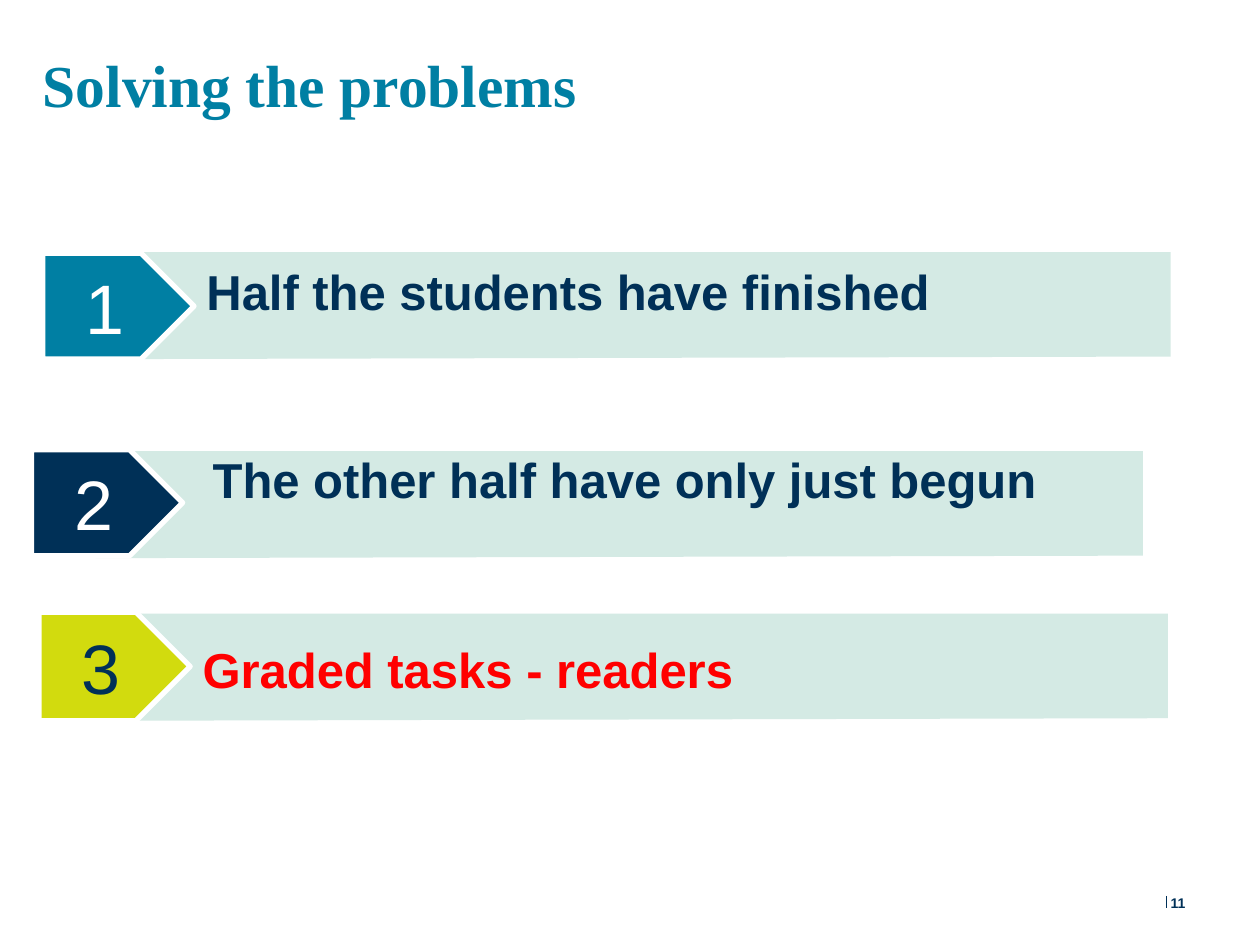
from dataclasses import dataclass

from lxml import etree
from pptx import Presentation
from pptx.dml.color import RGBColor
from pptx.enum.shapes import MSO_CONNECTOR, MSO_SHAPE
from pptx.enum.text import MSO_ANCHOR, PP_ALIGN
from pptx.oxml.ns import qn
from pptx.util import Inches, Pt

PENTAGON = MSO_SHAPE.PENTAGON
STRAIGHT = MSO_CONNECTOR.STRAIGHT
TOP, MIDDLE = MSO_ANCHOR.TOP, MSO_ANCHOR.MIDDLE
LEFT, CENTER = PP_ALIGN.LEFT, PP_ALIGN.CENTER


@dataclass(frozen=True)
class Theme:
    """Colours, fonts and type sizes of the slide."""
    teal: str = "007FA3"
    navy: str = "003057"
    lime: str = "D2DB0E"
    mint: str = "D4EAE4"
    red: str = "FF0000"
    white: str = "FFFFFF"
    heading: str = "Times New Roman"
    body: str = "Arial"
    title_size: int = 34
    number_size: int = 40
    text_size: int = 28
    page_size: int = 8


THEME = Theme()


def rgb(color):
    """Turn a hex string into a colour."""
    return RGBColor.from_string(color)


def place(shape, left, top, width, height):
    """Set the position and size of a shape in inches."""
    shape.left, shape.top = Inches(left), Inches(top)
    shape.width, shape.height = Inches(width), Inches(height)


def write(shape, text, size, color, font=THEME.body, bold=False,
          align=LEFT, anchor=TOP, inset=None, spacing=None):
    """Write one formatted paragraph into a shape."""
    tf = shape.text_frame
    tf.word_wrap = True
    tf.vertical_anchor = anchor
    if inset is not None:
        tf.margin_left = tf.margin_right = Inches(inset)
        tf.margin_top = tf.margin_bottom = Inches(inset)
    p = tf.paragraphs[0]
    p.alignment = align
    if spacing:
        p.line_spacing = spacing
    r = p.add_run()
    r.text = text
    r.font.name, r.font.size, r.font.bold = font, Pt(size), bold
    r.font.color.rgb = rgb(color)


def add_text(s, box, text, size, color, **fmt):
    """Add a text box with formatted text."""
    tb = s.shapes.add_textbox(*map(Inches, box))
    write(tb, text, size, color, **fmt)


def add_band(s, left, top, right):
    """Add the pale band with a notched left end and a sloping foot."""
    points = [(right, top + 0.83), (left + 0.03, top + 0.85),
              (left + 0.43, top + 0.44), (left, top), (right, top)]
    points = [(Inches(x), Inches(y)) for x, y in points]
    builder = s.shapes.build_freeform(*points[0], scale=1.0)
    builder.add_line_segments(points[1:], close=True)
    band = builder.convert_to_shape()
    band.shadow.inherit = False
    band.fill.solid()
    band.fill.fore_color.rgb = rgb(THEME.mint)
    band.line.fill.background()


def add_marker(s, box, number, fill, color):
    """Add a numbered pentagon marker."""
    sp = s.shapes.add_shape(PENTAGON, *map(Inches, box))
    sp.shadow.inherit = False
    sp.fill.solid()
    sp.fill.fore_color.rgb = rgb(fill)
    sp.line.color.rgb = rgb(THEME.white)
    sp.line.width = Pt(3)
    write(sp, number, THEME.number_size, color, align=CENTER, anchor=MIDDLE)


def add_page_number(s, number):
    """Add the page number and the thin rule to its left."""
    rule = s.shapes.add_connector(
        STRAIGHT, Inches(9.26), Inches(7.11), Inches(9.26), Inches(7.21))
    rule.line.color.rgb = rgb(THEME.navy)
    rule.line.width = Pt(0.75)
    etree.SubElement(rule._element.spPr, qn("a:effectLst"))
    add_text(s, (9.29, 7.1, 0.47, 0.14), number, THEME.page_size, THEME.navy,
             bold=True, anchor=MIDDLE, inset=0)


def main():
    """Build the slide and save it."""
    prs = Presentation()
    prs.slide_width, prs.slide_height = Inches(10), Inches(7.5)
    s = prs.slides.add_slide(prs.slide_layouts[5])
    title = s.shapes.title
    place(title, 0.34, 0.28, 9.13, 0.72)
    write(title, "Solving the problems", THEME.title_size, THEME.teal,
          font=THEME.heading, bold=True, inset=0, spacing=1.18)
    rows = [
        ((0.94, 2, 9.29), (0.34, 2.01, 1.2, 0.84), THEME.teal, THEME.white,
         (1.54, 2.03, 7.75, 0.57), "Half the students have finished", THEME.navy),
        ((0.73, 3.58, 9.07), (0.25, 3.57, 1.2, 0.84), THEME.navy, THEME.white,
         (1.59, 3.52, 7.94, 0.57), "The other half have only just begun", THEME.navy),
        ((0.91, 4.87, 9.27), (0.31, 4.86, 1.2, 0.86), THEME.lime, THEME.navy,
         (1.51, 5.03, 4.97, 0.57), "Graded tasks - readers", THEME.red),
    ]
    for i, (band, marker, fill, ink, box, text, color) in enumerate(rows, 1):
        add_band(s, *band)
        add_marker(s, marker, str(i), fill, ink)
        add_text(s, box, text, THEME.text_size, color, bold=True)
    add_page_number(s, "11")
    prs.save("out.pptx")


if __name__ == "__main__":
    main()
